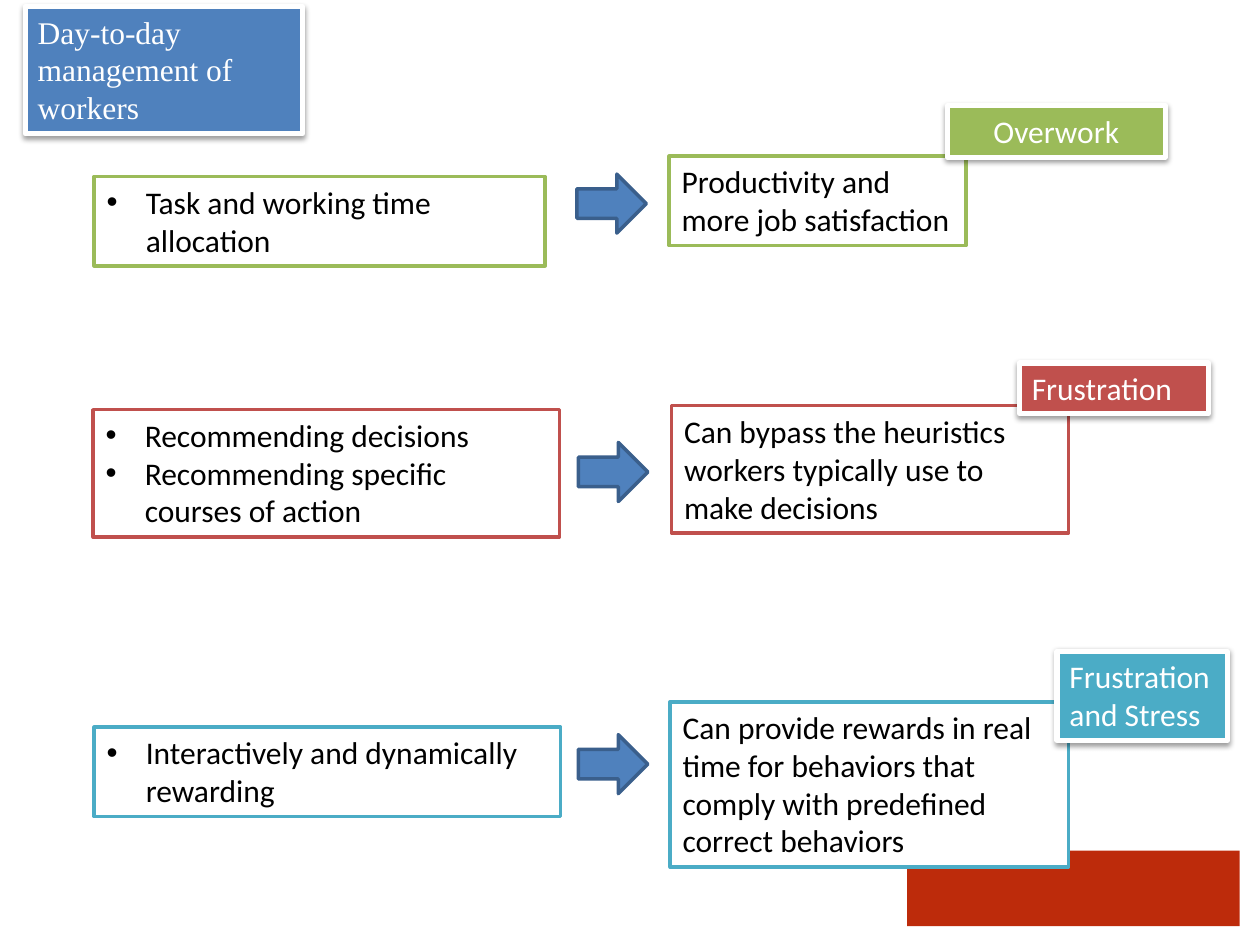
from lxml.etree import SubElement
from pptx import Presentation
from pptx.dml.color import RGBColor
from pptx.enum.shapes import MSO_SHAPE
from pptx.enum.text import MSO_ANCHOR, MSO_AUTO_SIZE, PP_ALIGN
from pptx.oxml.ns import qn
from pptx.util import Cm, Pt

WHITE = RGBColor(0xFF, 0xFF, 0xFF)
BLACK = RGBColor(0x00, 0x00, 0x00)
BLUE = RGBColor(0x4F, 0x81, 0xBD)
DARK_BLUE = RGBColor(0x3A, 0x5F, 0x8C)
GREEN = RGBColor(0x9B, 0xBB, 0x59)
RED = RGBColor(0xC0, 0x50, 0x4D)
TEAL = RGBColor(0x4B, 0xAC, 0xC6)
FOOTER_RED = RGBColor(0xBD, 0x2B, 0x0B)

TITLE = ("Day-to-day management of workers", (0.51, 0.13, 5.59, 2.57))
FOOTER = (18.29, 17.15, 6.7, 1.52)
ARROW_SIZE = (1.4, 1.19)

ROWS = [
    {
        "color": GREEN,
        "practices": (["Task and working time allocation"], (1.9, 3.56, 9.09, 1.8)),
        "arrow": (11.63, 3.51),
        "effect": ("Productivity and more job satisfaction", (13.49, 3.15, 5.99, 1.8)),
        "risk": ("Overwork", (19.1, 2.13, 4.39, 1.04), PP_ALIGN.CENTER),
    },
    {
        "color": RED,
        "practices": (
            ["Recommending decisions", "Recommending specific courses of action"],
            (1.88, 8.26, 9.4, 2.57),
        ),
        "arrow": (11.66, 8.92),
        "effect": (
            "Can bypass the heuristics workers typically use to make decisions",
            (13.54, 8.18, 8, 2.57),
        ),
        "risk": ("Frustration", (20.55, 7.32, 3.81, 1.02), PP_ALIGN.LEFT),
    },
    {
        "color": TEAL,
        "practices": (
            ["Interactively and dynamically rewarding"],
            (1.9, 14.66, 9.4, 1.8),
        ),
        "arrow": (11.66, 14.81),
        "effect": (
            "Can provide rewards in real time for behaviors that comply "
            "with predefined correct behaviors",
            (13.51, 14.15, 8.03, 3.33),
        ),
        "risk": ("Frustration and Stress", (21.31, 13.13, 3.43, 1.8), PP_ALIGN.LEFT),
    },
]


def add_shape(s, kind, box, fill, line=None, width=2):
    sp = s.shapes.add_shape(kind, *map(Cm, box))
    sp.shadow.inherit = False
    sp.fill.solid()
    sp.fill.fore_color.rgb = fill
    if line is None:
        sp.line.fill.background()
    else:
        sp.line.color.rgb = line
        sp.line.width = Pt(width)
    return sp


def add_bullet(p):
    pPr = p._p.get_or_add_pPr()
    pPr.set("marL", str(Cm(0.79)))
    pPr.set("indent", str(-Cm(0.79)))
    SubElement(pPr, qn("a:buFont"), typeface="Arial")
    SubElement(pPr, qn("a:buChar"), char="•")


def add_text(sp, lines, color, font="Calibri", align=PP_ALIGN.LEFT, bullets=False):
    tf = sp.text_frame
    tf.word_wrap = True
    tf.auto_size = MSO_AUTO_SIZE.SHAPE_TO_FIT_TEXT
    tf.vertical_anchor = MSO_ANCHOR.TOP
    for i, line in enumerate(lines):
        p = tf.add_paragraph() if i else tf.paragraphs[0]
        p.alignment = align
        if bullets:
            add_bullet(p)
        r = p.add_run()
        r.text = line
        r.font.name = font
        r.font.size = Pt(18)
        r.font.color.rgb = color


def add_label(s, text, box, fill, font="Calibri", align=PP_ALIGN.LEFT):
    sp = add_shape(s, MSO_SHAPE.RECTANGLE, box, fill, WHITE, 3)
    effects = sp._element.spPr.find(qn("a:effectLst"))
    shadow = SubElement(effects, qn("a:outerShdw"), blurRad=str(Pt(3.1)),
                        dist=str(Pt(1.6)), dir="5400000", rotWithShape="0")
    black = SubElement(shadow, qn("a:srgbClr"), val="000000")
    SubElement(black, qn("a:alpha"), val="38000")
    add_text(sp, [text], WHITE, font, align)


def add_outlined(s, lines, box, color, bullets=False):
    sp = add_shape(s, MSO_SHAPE.RECTANGLE, box, WHITE, color)
    add_text(sp, lines, BLACK, bullets=bullets)


def main():
    prs = Presentation()
    prs.slide_width, prs.slide_height = Cm(25.4), Cm(19.05)
    s = prs.slides.add_slide(prs.slide_layouts[6])

    add_shape(s, MSO_SHAPE.RECTANGLE, FOOTER, FOOTER_RED)
    add_label(s, *TITLE, BLUE, "Times New Roman")
    for row in ROWS:
        color = row["color"]
        add_outlined(s, *row["practices"], color, bullets=True)
        effect, box = row["effect"]
        add_outlined(s, [effect], box, color)
        add_shape(s, MSO_SHAPE.RIGHT_ARROW, row["arrow"] + ARROW_SIZE, BLUE, DARK_BLUE)
        risk, box, align = row["risk"]
        add_label(s, risk, box, color, align=align)

    prs.save("out.pptx")


if __name__ == "__main__":
    main()
